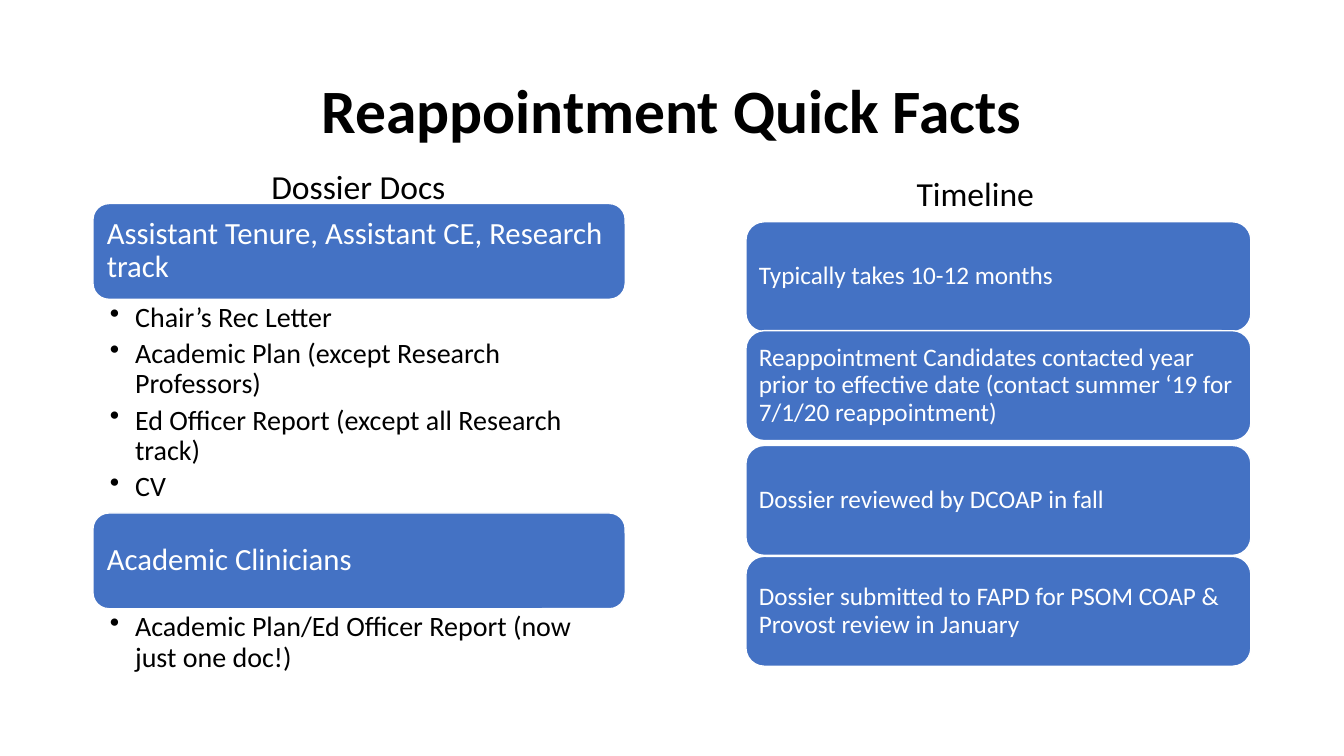
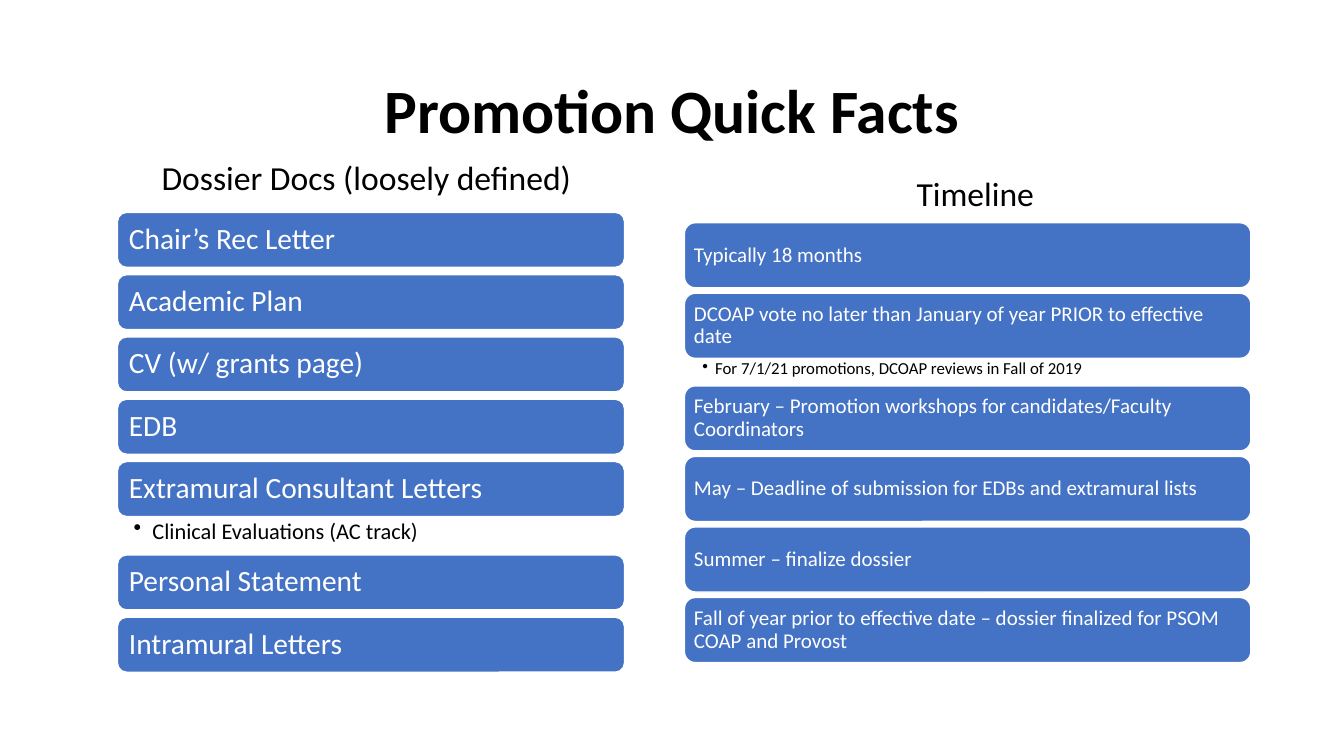
import pptx
import pptx.util
import pptx.dml.color
import pptx.enum.shapes
import pptx.enum.text
from lxml import etree

Pt = pptx.util.Pt
RGB = pptx.dml.color.RGBColor
ALIGN = pptx.enum.text.PP_ALIGN
ANCHOR = pptx.enum.text.MSO_ANCHOR

BLUE = RGB(0x44, 0x72, 0xC4)
WHITE = RGB(0xFF, 0xFF, 0xFF)
BLACK = RGB(0, 0, 0)
FONT = "Calibri"

# Content: each bar is (text, space below it, bulleted notes in that space)
SLIDES = [
    ("Reappointment Quick Facts", [
        dict(heading="Dossier Docs", head_at=(71.3, 115.2),
             left=66.4, top=145.4, width=380.2, bar_h=68.4, size=22, inset=6.6,
             note_size=20, indent=18, note_insets=(12.1, 2.9, 14.4, 2.9),
             bars=[
                 ("Assistant Tenure, Assistant CE, Research track", 152.6, [
                     "Chair’s Rec Letter",
                     "Academic Plan (except Research Professors)",
                     "Ed Officer Report (except all Research track)",
                     "CV"]),
                 ("Academic Clinicians", 49.7, [
                     "Academic Plan/Ed Officer Report (now just one doc!)"]),
             ]),
        dict(heading="Timeline", head_at=(511.9, 120.2),
             left=532.8, top=158.4, width=360.7, bar_h=78.5, size=18, inset=5.4,
             bars=[
                 ("Typically takes 10-12 months", -0.7, []),
                 ("Reappointment Candidates contacted year prior to effective date "
                  "(contact summer ‘19 for 7/1/20 reappointment)", 3.5, []),
                 ("Dossier reviewed by DCOAP in fall", 0.7, []),
                 ("Dossier submitted to FAPD for PSOM COAP & Provost review in January",
                  0, []),
             ]),
    ]),
    ("Promotion Quick Facts", [
        dict(heading="Dossier Docs (loosely defined)", head_at=(77, 108.7),
             left=83.9, top=151.7, width=362.2, bar_h=39.3, size=21, inset=6.3,
             note_size=16, indent=13.5, note_insets=(11.5, 2.2, 11.5, 2.2),
             bars=[
                 ("Chair’s Rec Letter", 5.2, []),
                 ("Academic Plan", 5.2, []),
                 ("CV (w/ grants page)", 5.2, []),
                 ("EDB", 5.2, []),
                 ("Extramural Consultant Letters", 27.4,
                  ["Clinical Evaluations (AC track)"]),
                 ("Personal Statement", 5.2, []),
                 ("Intramural Letters", 5.2, []),
             ]),
        dict(heading="Timeline", head_at=(511.9, 120.2),
             left=488.9, top=159.1, width=404.6, bar_h=46.5, size=15, inset=4.5,
             note_size=12, indent=9, note_insets=(12.9, 1.4, 8.6, 1.4),
             bars=[
                 ("Typically 18 months", 3.9, []),
                 ("DCOAP vote no later than January of year PRIOR to effective date",
                  19.6, ["For 7/1/21 promotions, DCOAP reviews in Fall of 2019"]),
                 ("February – Promotion workshops for candidates/Faculty Coordinators",
                  3.9, []),
                 ("May – Deadline of submission for EDBs and extramural lists", 3.9, []),
                 ("Summer – finalize dossier", 3.9, []),
                 ("Fall of year prior to effective date – dossier finalized for PSOM "
                  "COAP and Provost", 3.9, []),
             ]),
    ]),
]


def write(sp, lines, size, color, insets=(7.2, 3.6, 7.2, 3.6), bold=False,
          anchor=ANCHOR.TOP, **para):
    """Fill a shape with one paragraph per line and return the paragraphs."""
    tf = sp.text_frame
    tf.word_wrap = True
    tf.auto_size = pptx.enum.text.MSO_AUTO_SIZE.NONE
    tf.vertical_anchor = anchor
    for side, value in zip(("left", "top", "right", "bottom"), insets):
        setattr(tf, "margin_" + side, Pt(value))
    for i, line in enumerate(lines):
        p = tf.paragraphs[0] if i == 0 else tf.add_paragraph()
        for name, value in para.items():
            setattr(p, name, value)
        r = p.add_run()
        r.text = line
        for name, value in dict(name=FONT, size=Pt(size), bold=bold).items():
            setattr(r.font, name, value)
        r.font.color.rgb = color
    return tf.paragraphs


def add_bullet(p, indent):
    pPr = p._p.get_or_add_pPr()
    pPr.set("marL", str(Pt(indent)))
    pPr.set("indent", str(-Pt(indent)))
    etree.SubElement(pPr, pptx.oxml.ns.qn("a:buChar")).set("char", "•")


def add_bar(s, col, y, text):
    sp = s.shapes.add_shape(pptx.enum.shapes.MSO_SHAPE.ROUNDED_RECTANGLE,
                            Pt(col["left"]), Pt(y), Pt(col["width"]), Pt(col["bar_h"]))
    sp.shadow.inherit = False
    sp.fill.solid()
    sp.fill.fore_color.rgb = BLUE
    sp.line.color.rgb = WHITE
    sp.line.width = Pt(1)
    write(sp, [text], col["size"], WHITE, [col["inset"]] * 4,
          anchor=ANCHOR.MIDDLE, alignment=ALIGN.LEFT, line_spacing=0.9)


def add_notes(s, col, y, height, notes):
    sp = s.shapes.add_textbox(Pt(col["left"]), Pt(y), Pt(col["width"]), Pt(height))
    size = col["note_size"]
    for p in write(sp, notes, size, BLACK, col["note_insets"], line_spacing=0.9,
                   space_after=Pt(size * 0.21)):
        add_bullet(p, col["indent"])


def add_column(s, col):
    x, y = col["head_at"]
    sp = s.shapes.add_textbox(Pt(x), Pt(y), Pt(369.4), Pt(36))
    write(sp, [col["heading"]], 24, BLACK, alignment=ALIGN.CENTER)
    y = col["top"]
    for text, below, notes in col["bars"]:
        add_bar(s, col, y, text)
        y += col["bar_h"]
        if notes:
            add_notes(s, col, y, below, notes)
        y += below


def add_title(s, text):
    sp = s.shapes.title
    sp.left, sp.top, sp.width, sp.height = Pt(66), Pt(28.75), Pt(828), Pt(104.4)
    write(sp, [text], 44, BLACK, bold=True, anchor=ANCHOR.MIDDLE,
          alignment=ALIGN.CENTER, line_spacing=0.9)


def main():
    prs = pptx.Presentation()
    prs.slide_width, prs.slide_height = Pt(960), Pt(540)
    for title, columns in SLIDES:
        s = prs.slides.add_slide(prs.slide_layouts[5])
        add_title(s, title)
        for col in columns:
            add_column(s, col)
    prs.save("out.pptx")


if __name__ == "__main__":
    main()
